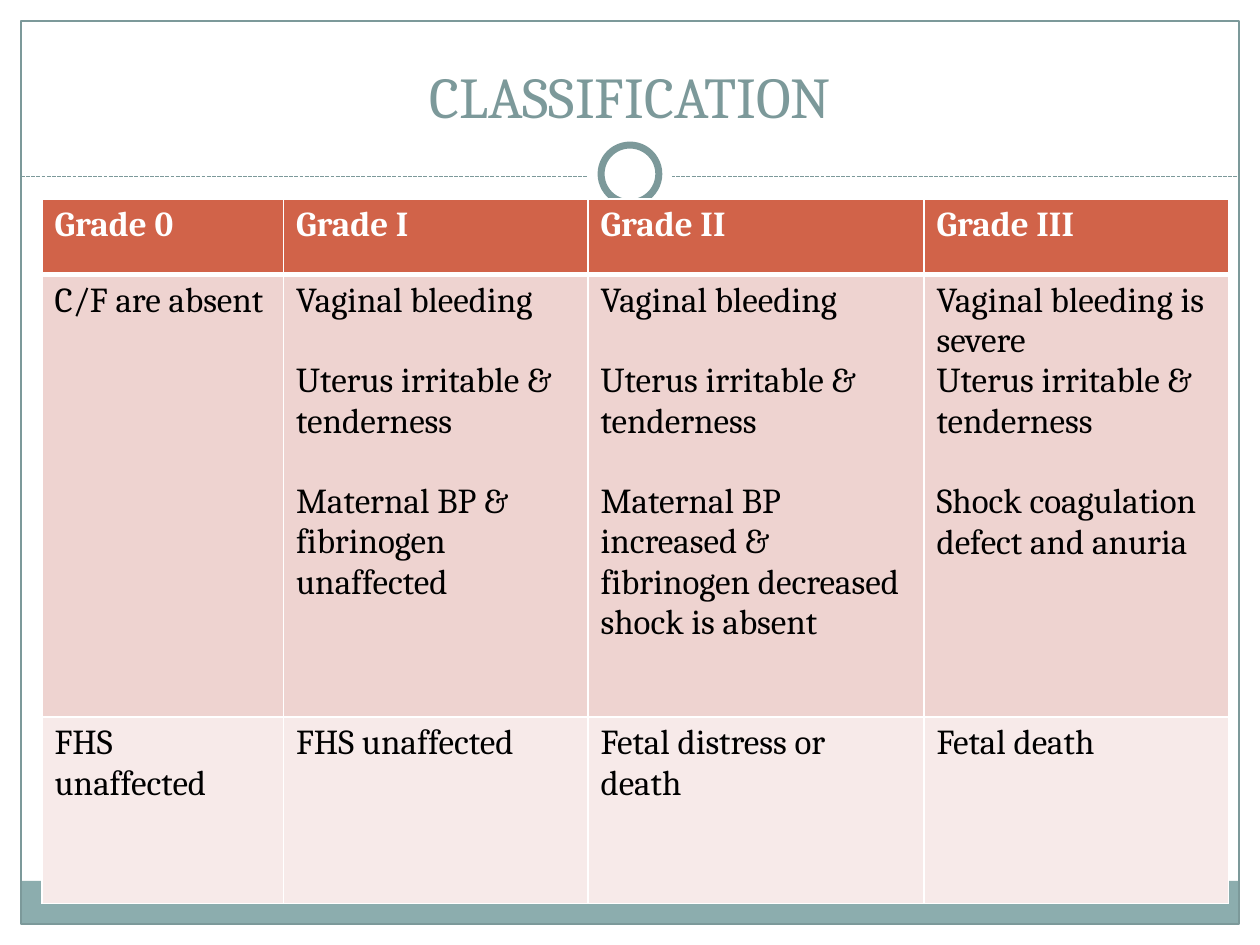
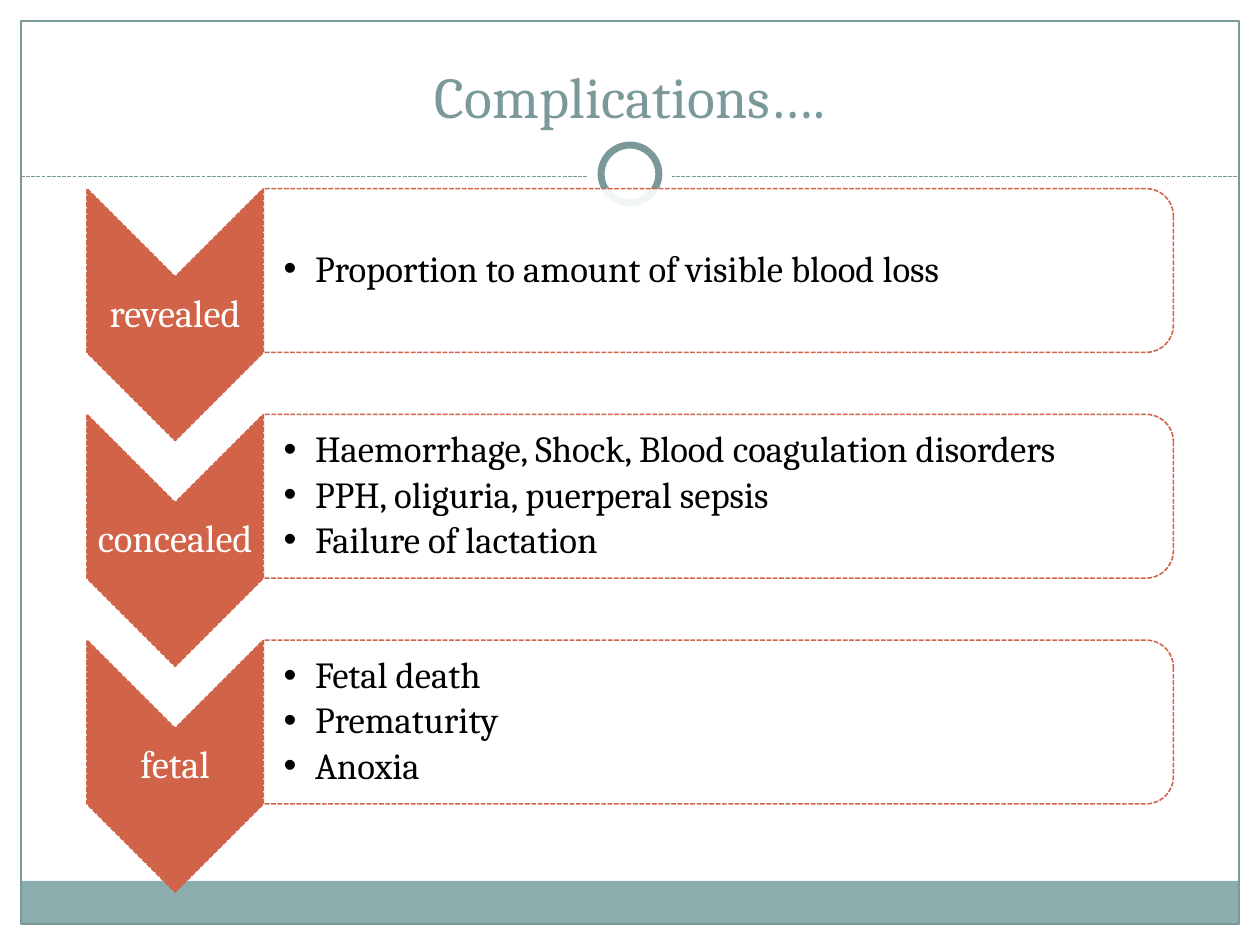
from lxml import etree
from pptx import Presentation
from pptx.dml.color import RGBColor
from pptx.enum.dml import MSO_LINE
from pptx.enum.shapes import MSO_CONNECTOR, MSO_SHAPE
from pptx.enum.text import MSO_ANCHOR, MSO_AUTO_SIZE, PP_ALIGN
from pptx.oxml.ns import qn
from pptx.util import Pt

WHITE = RGBColor(0xFF, 0xFF, 0xFF)
BLACK = RGBColor(0, 0, 0)
TEAL = RGBColor(0x7C, 0x99, 0x9A)
BAND = RGBColor(0x8C, 0xAD, 0xAE)
RUST = RGBColor(0xD1, 0x63, 0x49)
ROSE = RGBColor(0xEE, 0xD3, 0xD0)
BLUSH = RGBColor(0xF7, 0xEA, 0xE9)
FONT = "Cambria"

RECT, OVAL = MSO_SHAPE.RECTANGLE, MSO_SHAPE.OVAL
CHEVRON, TAB = MSO_SHAPE.CHEVRON, MSO_SHAPE.ROUND_2_SAME_RECTANGLE
DASH = MSO_LINE.SQUARE_DOT
STRAIGHT = MSO_CONNECTOR.STRAIGHT
CENTER, LEFT = PP_ALIGN.CENTER, PP_ALIGN.LEFT
MIDDLE, BOTTOM = MSO_ANCHOR.MIDDLE, MSO_ANCHOR.BOTTOM
NO_FIT = MSO_AUTO_SIZE.NONE

WIDE, HIGH = 720, 540
EDGE = 12
GAP = 23  # one empty line between findings

GRADES = [
    [["Grade 0"], ["Grade I"], ["Grade II"], ["Grade III"]],
    [["C/F are absent"],
     ["Vaginal bleeding", "Uterus irritable & tenderness",
      "Maternal BP & fibrinogen unaffected"],
     ["Vaginal bleeding", "Uterus irritable & tenderness",
      "Maternal BP increased & fibrinogen decreased", "shock is absent"],
     ["Vaginal bleeding is severe", "Uterus irritable & tenderness",
      "Shock coagulation defect and anuria"]],
    [["FHS unaffected"], ["FHS unaffected"], ["Fetal distress or death"],
     ["Fetal death"]],
]
# Findings that follow the one above without an empty line: (row, column, item)
TIGHT = {(1, 2, 3), (1, 3, 1)}

RISKS = [
    ("revealed", ["Proportion to amount of visible blood loss"]),
    ("concealed", ["Haemorrhage, Shock, Blood coagulation disorders",
                   "PPH, oliguria, puerperal sepsis",
                   "Failure of lactation"]),
    ("fetal", ["Fetal death", "Prematurity", "Anoxia"]),
]


def style(para, size, color, bold=False):
    font = para.font
    font.name, font.size, font.bold = FONT, Pt(size), bold
    font.color.rgb = color


def draw(slide, kind, box, fill=None, line=None, width=0.75, dash=None):
    shape = slide.shapes.add_shape(kind, *map(Pt, box))
    shape.shadow.inherit = False
    if fill is None:
        shape.fill.background()
    else:
        shape.fill.solid()
        shape.fill.fore_color.rgb = fill
    if line is None:
        shape.line.fill.background()
    else:
        shape.line.color.rgb = line
        shape.line.width = Pt(width)
        shape.line.dash_style = dash
    return shape


def turn(slide, kind, box, fill):
    """Draw a dashed shape turned a quarter right so that it fills box."""
    x, y, w, h = box
    shape = draw(slide, kind, (x + (w - h) / 2, y + (h - w) / 2, h, w),
                 fill, RUST, 0.9, DASH)
    shape.rotation = 90
    return shape


def frame(slide, box):
    """Draw the border, band, rule and ring, then move them to the layout."""
    x, y, w, h = box
    mid, rule = x + w / 2, y + 88.8
    band = draw(slide, RECT, (x, y + h - 24.6, w, 24.6), BAND)
    border = draw(slide, RECT, box, None, TEAL)
    line = slide.shapes.add_connector(STRAIGHT, Pt(x), Pt(rule),
                                      Pt(x + w), Pt(rule))
    line.line.color.rgb, line.line.width = TEAL, Pt(0.75)
    line.line.dash_style = DASH
    etree.SubElement(line._element.spPr, qn("a:effectLst"))
    disc = draw(slide, OVAL, (mid - 24, rule - 25.2, 48, 48), WHITE)
    ring = draw(slide, OVAL, (mid - 16.5, rule - 17.9, 33, 33), WHITE, TEAL, 4)
    tree = slide.slide_layout.shapes._spTree
    for i, part in enumerate((band, border, line, disc, ring)):
        node = part._element
        node.xpath(".//p:cNvPr")[0].set("id", str(100 + i))
        tree.insert(2 + i, node)


def head(slide, text, box):
    title = slide.shapes.title
    title.left, title.top, title.width, title.height = map(Pt, box)
    body = title.text_frame
    body.text = text
    body.auto_size, body.vertical_anchor = NO_FIT, BOTTOM
    para = body.paragraphs[0]
    para.alignment = CENTER
    style(para, 33, TEAL)


def edge(cell, first, last):
    """White borders, thick between the header and the first row."""
    props = cell._tc.get_or_add_tcPr()
    for i, side in enumerate(("lnL", "lnR", "lnT", "lnB")):
        thick = (first and side == "lnB") or (last and side == "lnT")
        line = etree.Element(qn("a:" + side), w=str(Pt(3 if thick else 1)))
        fill = etree.SubElement(line, qn("a:solidFill"))
        etree.SubElement(fill, qn("a:srgbClr"), val=str(WHITE))
        props.insert(i, line)


def grid(slide, box):
    x, y, w, h = box
    cols, rows = (138, 174, 192, 174), (43, 253, h - 296)
    table = slide.shapes.add_table(len(rows), len(cols),
                                   *map(Pt, box)).table
    for col, size in zip(table.columns, cols):
        col.width = Pt(size)
    for r, (size, fill) in enumerate(zip(rows, (RUST, ROSE, BLUSH))):
        table.rows[r].height = Pt(size)
        for c, items in enumerate(GRADES[r]):
            cell = table.cell(r, c)
            cell.fill.solid()
            cell.fill.fore_color.rgb = fill
            edge(cell, r == 0, r == 1)
            cell.text_frame.text = "\n".join(items)
            for i, para in enumerate(cell.text_frame.paragraphs):
                if i and (r, c, i) not in TIGHT:
                    para.space_before = Pt(GAP)
                style(para, 20, BLACK if r else WHITE, r == 0)


def write(slide, lines, box, pads, size, color, align, bullet=False):
    body = slide.shapes.add_textbox(*map(Pt, box)).text_frame
    body.word_wrap, body.vertical_anchor = True, MIDDLE
    (body.margin_left, body.margin_top,
     body.margin_right, body.margin_bottom) = map(Pt, pads)
    body.text = "\n".join(lines)
    for para in body.paragraphs:
        para.alignment, para.line_spacing = align, 0.9
        if bullet:
            para.space_after = Pt(3.15)
            props = para._p.get_or_add_pPr()
            props.set("marL", str(Pt(18)))
            props.set("indent", str(-Pt(18)))
            etree.SubElement(props, qn("a:buFont"), typeface="Arial")
            etree.SubElement(props, qn("a:buChar"), char="•")
        style(para, size, color)


def risk(slide, name, items, box):
    """One chevron with its label, and the panel at its right."""
    x, y, w, h = box
    arm, tall = 100.8, 93.6
    turn(slide, CHEVRON, (x, y, arm, h), RUST)
    write(slide, [name], (x, y + arm / 2, arm, h - arm), [1.4] * 4,
          22, WHITE, CENTER)
    panel = turn(slide, TAB, (x + arm, y, w - arm, tall), WHITE)
    tint = panel._element.spPr.find(qn("a:solidFill"))[0]
    etree.SubElement(tint, qn("a:alpha"), val="90000")
    write(slide, items, (x + arm, y + 4.7, w - arm - 4.7, tall - 9.4),
          (11.5, 0.8, 0.8, 0.8), 21, BLACK, LEFT, True)


def main():
    deck = Presentation()
    deck.slide_width, deck.slide_height = Pt(WIDE), Pt(HIGH)
    plain = deck.slide_layouts[5]
    grades, risks = (deck.slides.add_slide(plain) for _ in range(2))
    frame(grades, (EDGE, EDGE, WIDE - 2 * EDGE, HIGH - 2 * EDGE))
    for slide, text in ((grades, "CLASSIFICATION"),
                        (risks, "Complications….")):
        head(slide, text, (24, 18, WIDE - 48, 60))

    # Grades of the condition
    grid(grades, (24, 113.8, 678, 402.4))

    # Complications by type
    for i, (name, items) in enumerate(RISKS):
        risk(risks, name, items, (49.7, 107.8 + 129 * i, 620.8, 144))

    deck.save("out.pptx")


if __name__ == "__main__":
    main()
